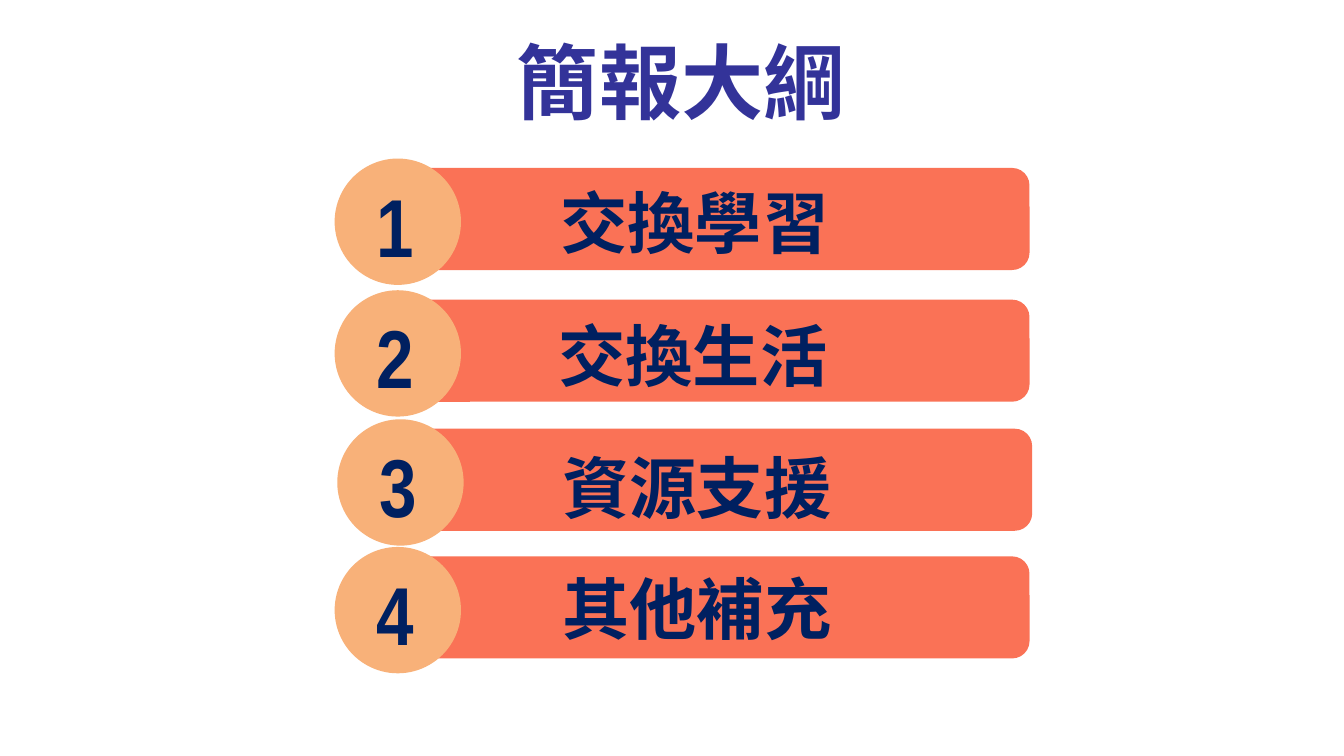
from dataclasses import dataclass

from pptx import Presentation
from pptx.dml.color import RGBColor
from pptx.enum import shapes, text
from pptx.util import Inches, Pt


@dataclass(frozen=True)
class Theme:
    title_color: RGBColor = RGBColor(0x33, 0x33, 0x99)
    text_color: RGBColor = RGBColor(0x00, 0x20, 0x60)
    bar_color: RGBColor = RGBColor(0xFA, 0x72, 0x56)
    circle_color: RGBColor = RGBColor(0xF8, 0xB1, 0x79)
    title_font: str = "Arial"
    item_font: str = "Arial Narrow"
    large: int = 44
    medium: int = 36


THEME = Theme()

# Each item: wording, row left and top, label left, top and width
ITEMS = [
    ("交換學習", 2.49, 1.18, 3.68, 1.15, 2.98),
    ("交換生活", 2.49, 2.16, 3.76, 2.14, 2.79),
    ("資源支援", 2.51, 3.12, 3.78, 3.12, 2.81),
    ("其他補充", 2.49, 4.07, 3.98, 4.02, 2.41),
]


def box(left, top, width, height):
    return Inches(left), Inches(top), Inches(width), Inches(height)


def write_text(shape, wording, font_name, size, color, anchor):
    frame = shape.text_frame
    frame.word_wrap = True
    frame.auto_size = text.MSO_AUTO_SIZE.NONE
    frame.vertical_anchor = anchor
    frame.margin_left = frame.margin_right = Inches(0.1)
    frame.margin_top = frame.margin_bottom = Inches(0.1)
    paragraph = frame.paragraphs[0]
    paragraph.text = wording
    paragraph.alignment = text.PP_ALIGN.CENTER
    font = paragraph.font
    font.name, font.size, font.bold = font_name, Pt(size), True
    font.color.rgb = color


def add_title(slide, wording):
    title = slide.shapes.title
    title.left, title.top, title.width, title.height = box(0.57, 0.5, 9, 0.57)
    write_text(title, wording, THEME.title_font, THEME.large,
               THEME.title_color, text.MSO_ANCHOR.BOTTOM)


def add_filled_shape(group, kind, position, color):
    shape = group.shapes.add_shape(kind, *position)
    shape.shadow.inherit = False
    shape.fill.solid()
    shape.fill.fore_color.rgb = color
    shape.line.fill.background()
    return shape


def add_label(group, wording, position, size):
    label = group.shapes.add_textbox(*position)
    write_text(label, wording, THEME.item_font, size,
               THEME.text_color, text.MSO_ANCHOR.MIDDLE)


def add_item(slide, number, wording, left, top, label_left, label_top, label_width):
    group = slide.shapes.add_group_shape()
    # Bar with its number circle
    bar = add_filled_shape(group, shapes.MSO_SHAPE.ROUNDED_RECTANGLE,
                           box(left + 0.15, top + 0.07, 5.02, 0.76), THEME.bar_color)
    bar.adjustments[0] = 0.17
    add_filled_shape(group, shapes.MSO_SHAPE.OVAL,
                     box(left, top, 0.94, 0.94), THEME.circle_color)
    # Wording and number
    add_label(group, wording, box(label_left, label_top, label_width, 1), THEME.medium)
    add_label(group, str(number), box(left + 0.07, top + 0.06, 0.76, 0.86), THEME.large)


def main():
    presentation = Presentation()
    # Widescreen, 16:9
    presentation.slide_width = Inches(10)
    presentation.slide_height = Inches(10 * 9 / 16)
    slide = presentation.slides.add_slide(presentation.slide_layouts.get_by_name("Title Only"))
    add_title(slide, "簡報大綱")
    for number, item in enumerate(ITEMS, start=1):
        add_item(slide, number, *item)
    presentation.save("out.pptx")


if __name__ == "__main__":
    main()
